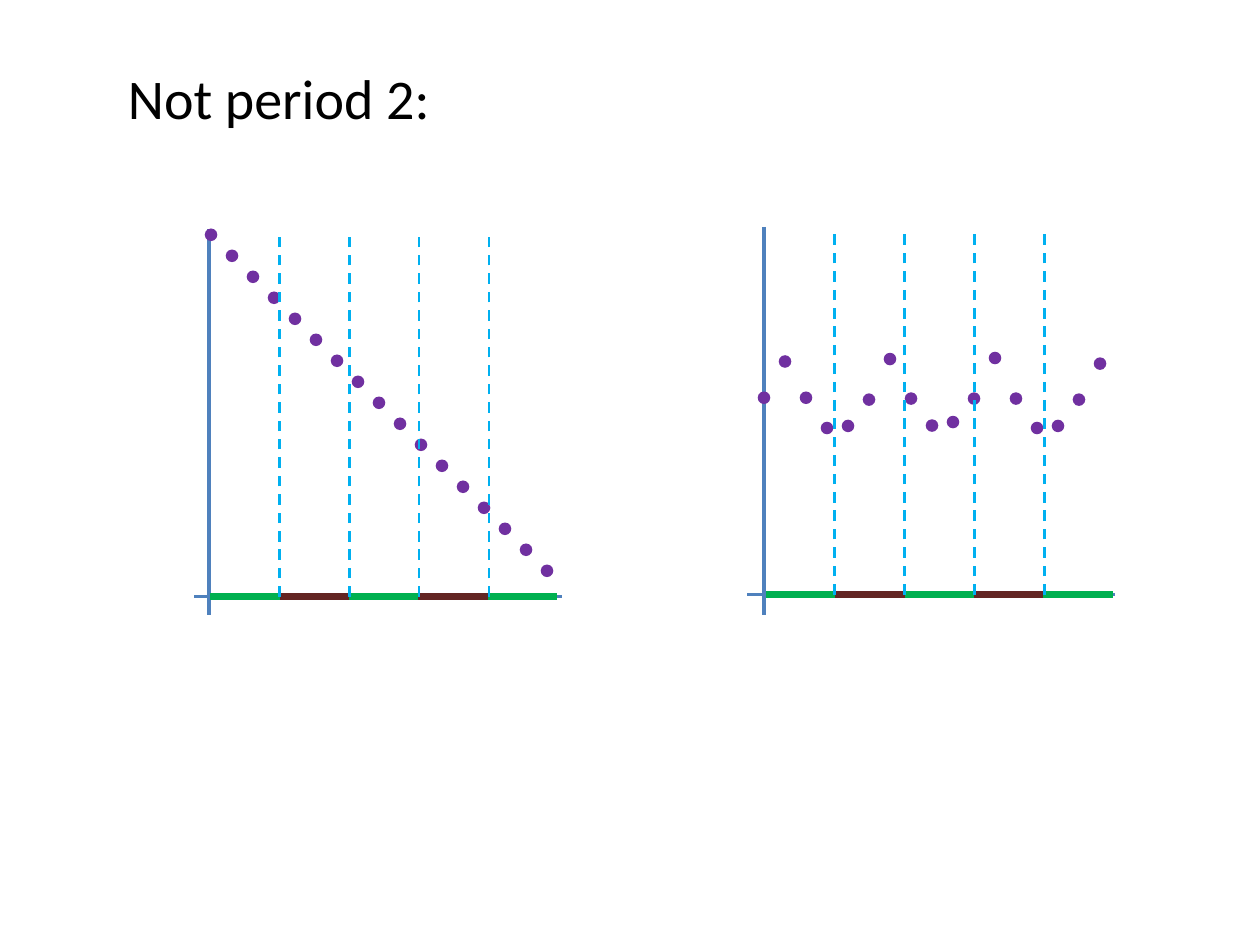
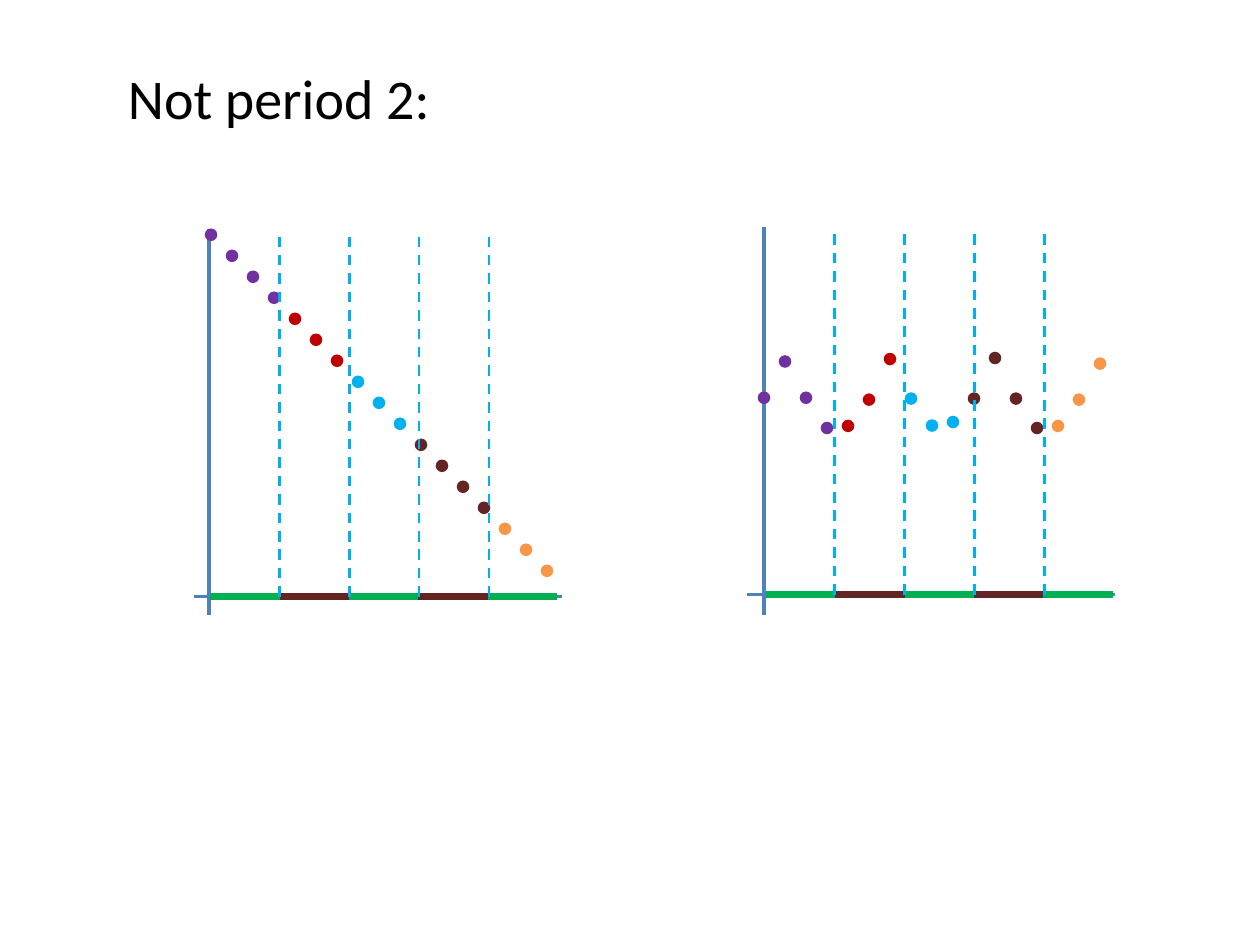
from dataclasses import dataclass

from lxml.etree import SubElement
from pptx import Presentation
from pptx.dml.color import RGBColor
from pptx.enum.dml import MSO_LINE_DASH_STYLE
from pptx.enum.shapes import MSO_CONNECTOR, MSO_SHAPE
from pptx.enum.text import MSO_AUTO_SIZE
from pptx.oxml.ns import qn
from pptx.util import Pt

# Shared colours and sizes
BLACK = RGBColor(0x00, 0x00, 0x00)
AXIS_BLUE = RGBColor(0x4F, 0x81, 0xBD)
GUIDE_BLUE = RGBColor(0x00, 0xB0, 0xF0)
GREEN = RGBColor(0x00, 0xB0, 0x50)
BROWN = RGBColor(0x63, 0x25, 0x23)
PURPLE = RGBColor(0x70, 0x30, 0xA0)
RED = RGBColor(0xC0, 0x00, 0x00)
ORANGE = RGBColor(0xF7, 0x96, 0x46)

DOT_SIZE = 7.2
DOT_PITCH = 12
BAND_WIDTH = 39.6
BAND_COUNT = 5
GUIDE_COUNT = 4

AXIS_LINE = {"width": Pt(2)}
BAND_LINE = {"width": Pt(4)}
GUIDE_LINE = {"width": Pt(1.5), "dash_style": MSO_LINE_DASH_STYLE.DASH}
TITLE_FONT = {"name": "Calibri", "size": Pt(32)}

# Dot colours along each sequence: all alike, or one colour per band
PLAIN_DOTS = [PURPLE] * 17
BANDED_DOTS = ([PURPLE] * 4 + [RED] * 3 + [GUIDE_BLUE] * 3
               + [BROWN] * 4 + [ORANGE] * 3)


@dataclass
class Plot:
    axis_x: float
    axis_top: float
    base_left: float
    base_right: float
    base_y: float
    band_left: float
    guide_left: float
    guide_pitch: float
    guide_top: float
    dot_left: float
    dot_tops: list


FALLING_PLOT = Plot(
    axis_x=119.5, axis_top=130.6,
    base_left=110.9, base_right=321.1, base_y=341,
    band_left=120.2, guide_left=159.7, guide_pitch=39.9, guide_top=134,
    dot_left=117, dot_tops=[130.6 + DOT_PITCH * i for i in range(17)])
WAVING_PLOT = Plot(
    axis_x=436.6, axis_top=129.6,
    base_left=427, base_right=637.2, base_y=339.8,
    band_left=437.8, guide_left=476.8, guide_pitch=40, guide_top=133.4,
    dot_left=433,
    dot_tops=[223.7, 203, 223.7, 241, 239.8, 224.8, 201.6, 224.2, 239.6,
              237.6, 224.2, 201, 224.2, 241, 239.8, 224.8, 204.2])
AXIS_BOTTOM = 351.4


def apply_format(target, values):
    for attribute, value in values.items():
        setattr(target, attribute, value)


def add_title(slide, text):
    shape = slide.shapes.add_textbox(Pt(66), Pt(32.7), Pt(605.5), Pt(46))
    text_frame = shape.text_frame
    apply_format(text_frame, {"word_wrap": True,
                              "auto_size": MSO_AUTO_SIZE.SHAPE_TO_FIT_TEXT})
    paragraph = text_frame.paragraphs[0]
    run = paragraph.add_run()
    run.text = text
    apply_format(run.font, TITLE_FONT)
    run.font.color.rgb = BLACK


def add_line(slide, start, end, color, line_format):
    connector = slide.shapes.add_connector(
        MSO_CONNECTOR.STRAIGHT, *(Pt(value) for value in start + end))
    connector.line.color.rgb = color
    apply_format(connector.line, line_format)
    SubElement(connector._element.spPr, qn("a:effectLst"))


def add_dot(slide, left, top, color):
    dot = slide.shapes.add_shape(MSO_SHAPE.OVAL, Pt(left), Pt(top),
                                 Pt(DOT_SIZE), Pt(DOT_SIZE))
    dot.shadow.inherit = False
    dot.fill.solid()
    dot.fill.fore_color.rgb = color
    dot.line.fill.background()


def add_plot(slide, plot, dot_colors):
    # Axes
    add_line(slide, (plot.axis_x, plot.axis_top),
             (plot.axis_x, AXIS_BOTTOM), AXIS_BLUE, AXIS_LINE)
    add_line(slide, (plot.base_left, plot.base_y),
             (plot.base_right, plot.base_y), AXIS_BLUE, AXIS_LINE)

    # Sequence values
    for index, (top, color) in enumerate(zip(plot.dot_tops, dot_colors)):
        add_dot(slide, plot.dot_left + DOT_PITCH * index, top, color)

    # Alternating bands on the base line
    for index in range(BAND_COUNT):
        left = plot.band_left + BAND_WIDTH * index
        add_line(slide, (left, plot.base_y),
                 (left + BAND_WIDTH, plot.base_y),
                 BROWN if index % 2 else GREEN, BAND_LINE)

    # Dashed guides between the bands
    for index in range(GUIDE_COUNT):
        x = plot.guide_left + plot.guide_pitch * index
        add_line(slide, (x, plot.base_y), (x, plot.guide_top),
                 GUIDE_BLUE, GUIDE_LINE)


def main():
    presentation = Presentation()
    apply_format(presentation, {"slide_width": Pt(720),
                                "slide_height": Pt(540)})
    blank_layout = presentation.slide_layouts[6]
    for dot_colors in (PLAIN_DOTS, BANDED_DOTS):
        slide = presentation.slides.add_slide(blank_layout)
        add_title(slide, "Not period 2:")
        for plot in (FALLING_PLOT, WAVING_PLOT):
            add_plot(slide, plot, dot_colors)
    presentation.save("out.pptx")


if __name__ == "__main__":
    main()
